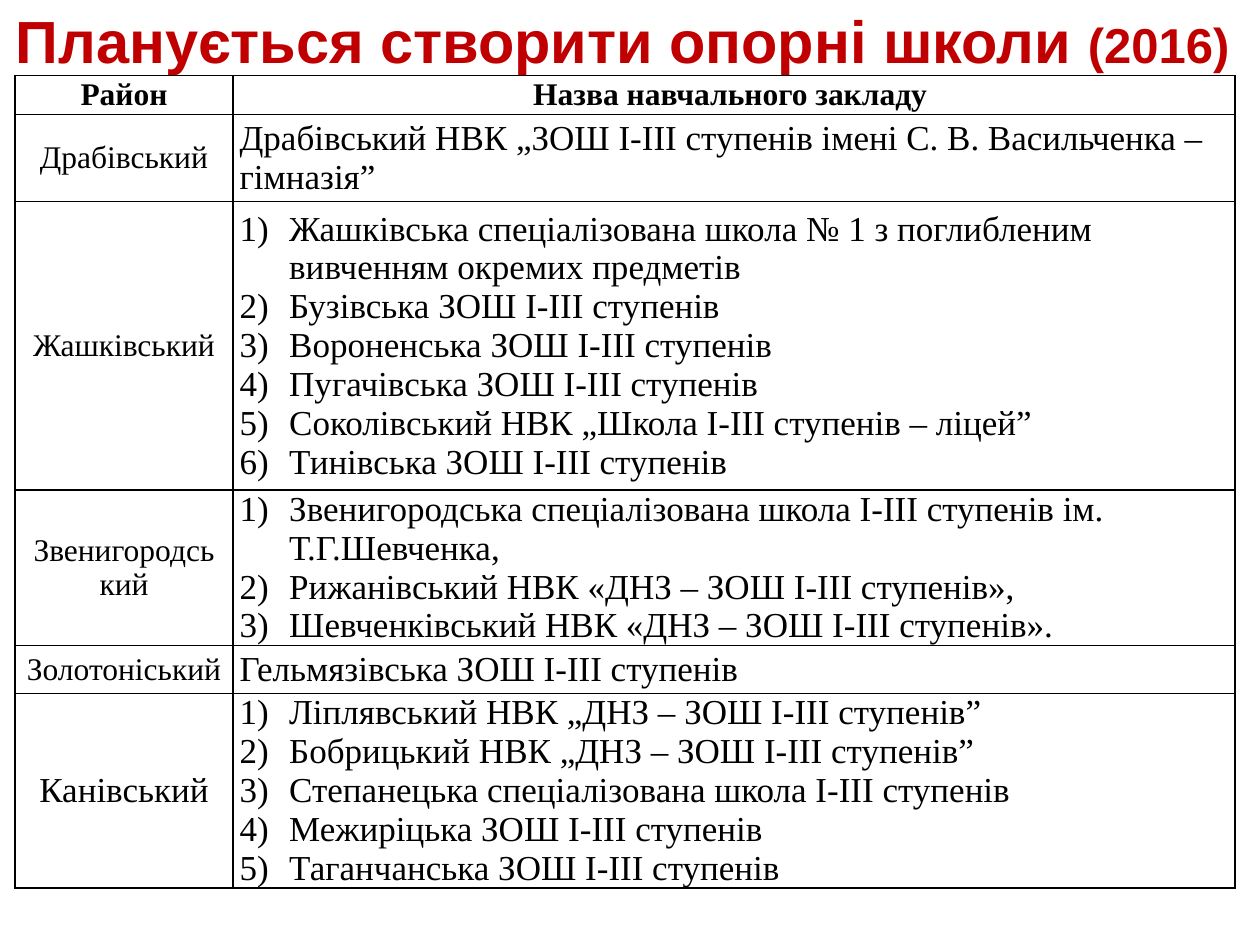
from dataclasses import dataclass

from lxml import etree
from pptx import Presentation
from pptx.dml.color import RGBColor
from pptx.enum import text
from pptx.oxml import ns
from pptx.util import Cm, Pt


@dataclass(frozen=True)
class Theme:
    red: RGBColor = RGBColor(0xC0, 0x00, 0x00)
    ink: RGBColor = RGBColor(0x00, 0x00, 0x00)
    paper: RGBColor = RGBColor(0xFF, 0xFF, 0xFF)
    sans: str = "Arial"
    serif: str = "Times New Roman"
    title: int = 34
    year: int = 28
    label: int = 18
    body: int = 20


@dataclass(frozen=True)
class District:
    name: str
    schools: tuple[str, ...]
    height: float
    size: int = 18
    inset: float = 0.13


THEME = Theme()
INSET = 0.13
HEAD = 0.79
WIDTHS = (4.4, 20.2)
DISTRICTS = (
    District("Драбівський", (
        "Драбівський НВК „ЗОШ І-ІІІ ступенів імені С. В. Васильченка – гімназія”",
    ), 1.75, inset=0),
    District("Жашківський", (
        "Жашківська спеціалізована школа № 1 з поглибленим вивченням окремих предметів",
        "Бузівська ЗОШ I-III ступенів",
        "Вороненська ЗОШ I-III ступенів",
        "Пугачівська ЗОШ I-III ступенів",
        "Соколівський НВК „Школа І-ІІІ ступенів – ліцей”",
        "Тинівська ЗОШ I-III ступенів",
    ), 5.82, inset=0),
    District("Звенигородсь кий", (
        "Звенигородська спеціалізована школа І-ІІІ ступенів ім. Т.Г.Шевченка,",
        "Рижанівський НВК «ДНЗ – ЗОШ І-ІІІ ступенів»,",
        "Шевченківський НВК «ДНЗ – ЗОШ І-ІІІ ступенів».",
    ), 3.13, inset=0),
    District("Золотоніський", ("Гельмязівська ЗОШ І-ІІІ ступенів",), 0.97),
    District("Канівський", (
        "Ліплявський НВК „ДНЗ – ЗОШ І-ІІІ ступенів”",
        "Бобрицький НВК „ДНЗ – ЗОШ І-ІІІ ступенів”",
        "Степанецька спеціалізована школа І-ІІІ ступенів",
        "Межиріцька ЗОШ І-ІІІ ступенів",
        "Таганчанська ЗОШ І-ІІІ ступенів",
    ), 3.91, size=20),
)


def style(font, face: str, size: int, color: RGBColor, bold: bool) -> None:
    font.name, font.size, font.bold = face, Pt(size), bold
    font.color.rgb = color


def border(cell) -> None:
    props = cell._tc.get_or_add_tcPr()
    for side in ("lnL", "lnR", "lnT", "lnB"):
        line = etree.SubElement(props, ns.qn(f"a:{side}"), w=str(Pt(1)))
        fill = etree.SubElement(line, ns.qn("a:solidFill"))
        etree.SubElement(fill, ns.qn("a:srgbClr"), val=str(THEME.ink))


def number(para) -> None:
    props = para._p.get_or_add_pPr()
    props.set("marL", str(Cm(1)))
    props.set("indent", str(-Cm(1)))
    etree.SubElement(props, ns.qn("a:buFont"), typeface="+mj-lt")
    etree.SubElement(props, ns.qn("a:buAutoNum"), type="arabicParenR")


def write(cell, lines: tuple[str, ...], size: int, center: bool = False,
          bold: bool = False, inset: float = INSET) -> None:
    border(cell)
    cell.fill.solid()
    cell.fill.fore_color.rgb = THEME.paper
    cell.vertical_anchor = text.MSO_ANCHOR.MIDDLE
    cell.margin_left = cell.margin_right = Cm(inset)
    cell.margin_top = cell.margin_bottom = 0
    cell.text_frame.text = "\n".join(lines)
    for para in cell.text_frame.paragraphs:
        para.alignment = text.PP_ALIGN.CENTER if center else text.PP_ALIGN.LEFT
        if len(lines) > 1:
            number(para)
        for run in para.runs:
            style(run.font, THEME.serif, size, THEME.ink, bold)


def add_title(slide) -> None:
    title = slide.shapes.title
    title.left, title.top, title.width, title.height = 0, 0, Cm(25.1), Cm(1.6)
    frame = title.text_frame
    frame.vertical_anchor = text.MSO_ANCHOR.MIDDLE
    frame.auto_size = text.MSO_AUTO_SIZE.NONE
    frame.margin_left = frame.margin_right = 0
    para = frame.paragraphs[0]
    para.alignment = text.PP_ALIGN.CENTER
    for words, size in (("Планується створити опорні школи ", THEME.title),
                        ("(2016)", THEME.year)):
        run = para.add_run()
        run.text = words
        style(run.font, THEME.sans, size, THEME.red, True)


def add_schools(slide) -> None:
    heights = [HEAD] + [item.height for item in DISTRICTS]
    table = slide.shapes.add_table(
        len(heights), len(WIDTHS), Cm(0.3), Cm(1.52),
        Cm(sum(WIDTHS)), Cm(sum(heights))).table
    table.first_row = table.horz_banding = False
    for col, width in zip(table.columns, WIDTHS):
        col.width = Cm(width)
    for row, height in zip(table.rows, heights):
        row.height = Cm(height)

    # Header row
    for col, words in enumerate(("Район", "Назва навчального закладу ")):
        write(table.cell(0, col), (words,), THEME.label, center=True, bold=True)

    # One row per district
    for row, item in enumerate(DISTRICTS, 1):
        write(table.cell(row, 0), (item.name,), item.size, center=True,
              inset=item.inset)
        write(table.cell(row, 1), item.schools, THEME.body)


def main() -> None:
    deck = Presentation()
    deck.slide_width, deck.slide_height = Cm(25.4), Cm(19.05)
    slide = deck.slides.add_slide(deck.slide_layouts[5])
    add_title(slide)
    add_schools(slide)
    deck.save("out.pptx")


if __name__ == "__main__":
    main()
